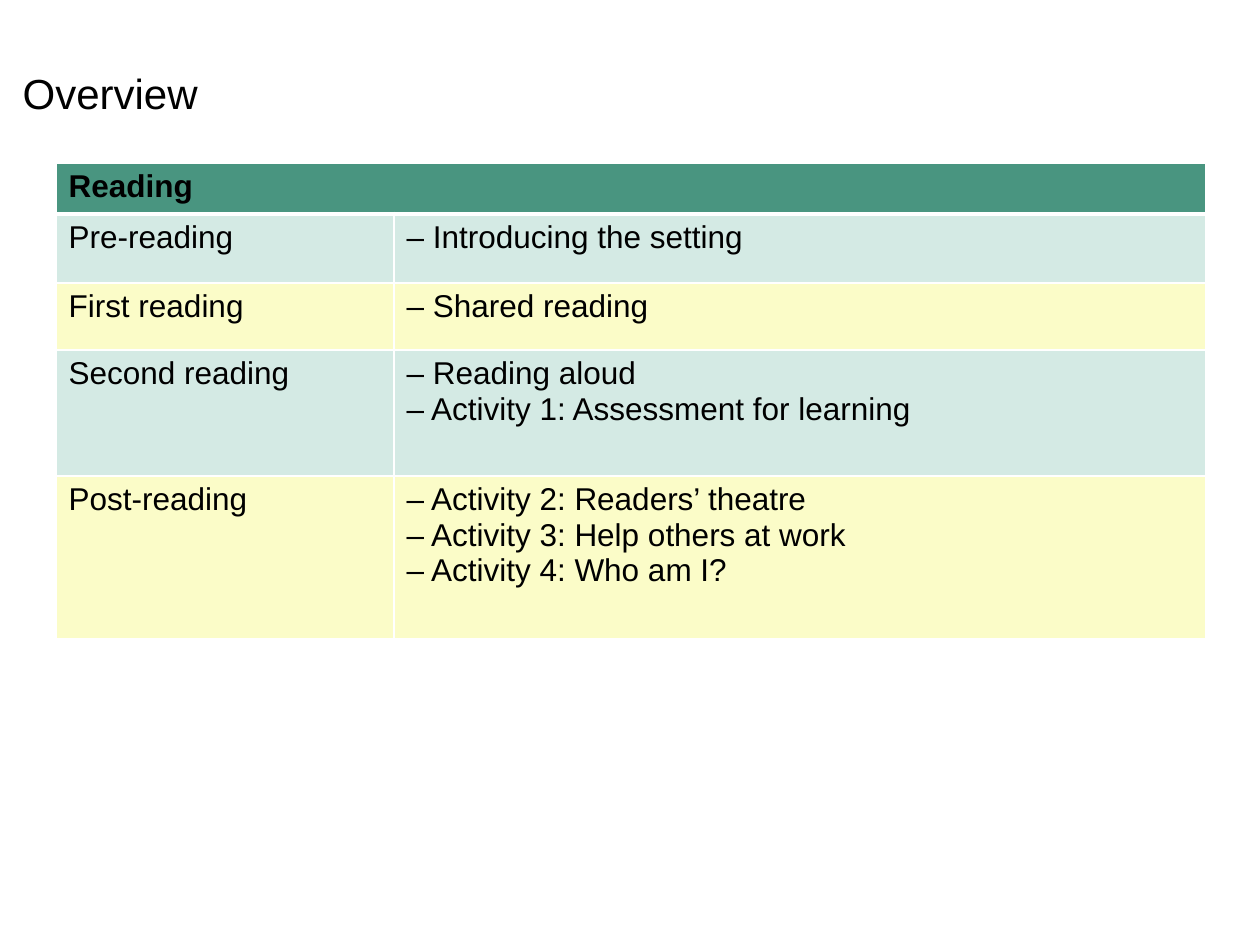
"""Build the reading overview slide with its table of stages."""
from dataclasses import dataclass

from lxml.etree import SubElement
from pptx import Presentation
from pptx.dml.color import RGBColor
from pptx.enum.text import MSO_ANCHOR as Anchor, MSO_AUTO_SIZE as AutoSize, PP_ALIGN as Align
from pptx.oxml.ns import qn
from pptx.table import _Cell as Cell
from pptx.text.text import _Paragraph as Paragraph
from pptx.util import Emu, Pt

PX = 914400 / 126
COLORS = {
    "text": "000000",
    "border": "FFFFFF",
    "header": "499580",
    "mint": "D4EAE4",
    "cream": "FBFCC8",
}
FONT = "Arial"
COLUMN_WIDTHS = (338, 812)


@dataclass(frozen=True)
class Stage:
    name: str
    activities: tuple[str, ...]
    height: int
    fill: str
    bold: bool = False


STAGES = (
    Stage("Reading", (), 51, "header", True),
    Stage("Pre-reading", ("– Introducing the setting",), 69, "mint"),
    Stage("First reading", ("– Shared reading",), 67, "cream"),
    Stage(
        "Second reading",
        ("– Reading aloud", "– Activity 1: Assessment for learning"),
        126,
        "mint",
    ),
    Stage(
        "Post-reading",
        (
            "– Activity 2: Readers’ theatre",
            "– Activity 3: Help others at work",
            "– Activity 4: Who am I?",
        ),
        163,
        "cream",
    ),
)


def px(length: int) -> Emu:
    return Emu(round(length * PX))


def color(name: str) -> RGBColor:
    return RGBColor.from_string(COLORS[name])


def add_run(paragraph: Paragraph, text: str, size: int, bold: bool = False) -> None:
    paragraph.alignment = Align.LEFT
    run = paragraph.add_run()
    run.text = text
    run.font.name = FONT
    run.font.size = Pt(size)
    run.font.bold = bold
    run.font.color.rgb = color("text")


def add_borders(cell: Cell, top: int, bottom: int) -> None:
    properties = cell._tc.get_or_add_tcPr()
    for side, width in (("L", 1), ("R", 1), ("T", top), ("B", bottom)):
        line = SubElement(properties, qn(f"a:ln{side}"), w=str(Pt(width)))
        fill = SubElement(line, qn("a:solidFill"))
        SubElement(fill, qn("a:srgbClr"), val=COLORS["border"])


def fill_cell(cell: Cell, lines: tuple[str, ...], stage: Stage, row: int) -> None:
    add_borders(cell, 3 if row == 1 else 1, 3 if row == 0 else 1)
    cell.fill.solid()
    cell.fill.fore_color.rgb = color(stage.fill)
    frame = cell.text_frame
    for index, line in enumerate(lines):
        paragraph = frame.add_paragraph() if index else frame.paragraphs[0]
        add_run(paragraph, line, 18, stage.bold)


def main() -> None:
    presentation = Presentation()
    presentation.slide_width, presentation.slide_height = px(1260), px(945)
    slide = presentation.slides.add_slide(presentation.slide_layouts[5])

    title = slide.shapes.title
    title.left, title.top, title.width, title.height = px(10), px(61), px(203), px(63)
    frame = title.text_frame
    frame.auto_size = AutoSize.NONE
    frame.word_wrap = False
    frame.vertical_anchor = Anchor.TOP
    add_run(frame.paragraphs[0], "Overview", 24)

    table = slide.shapes.add_table(
        len(STAGES), len(COLUMN_WIDTHS), px(56), px(163),
        px(sum(COLUMN_WIDTHS)), px(sum(stage.height for stage in STAGES)),
    ).table
    for column, width in zip(table.columns, COLUMN_WIDTHS):
        column.width = px(width)
    for row, stage in enumerate(STAGES):
        table.rows[row].height = px(stage.height)
        fill_cell(table.cell(row, 0), (stage.name,), stage, row)
        fill_cell(table.cell(row, 1), stage.activities, stage, row)
    table.cell(0, 0).merge(table.cell(0, 1))

    presentation.save("out.pptx")


if __name__ == "__main__":
    main()
